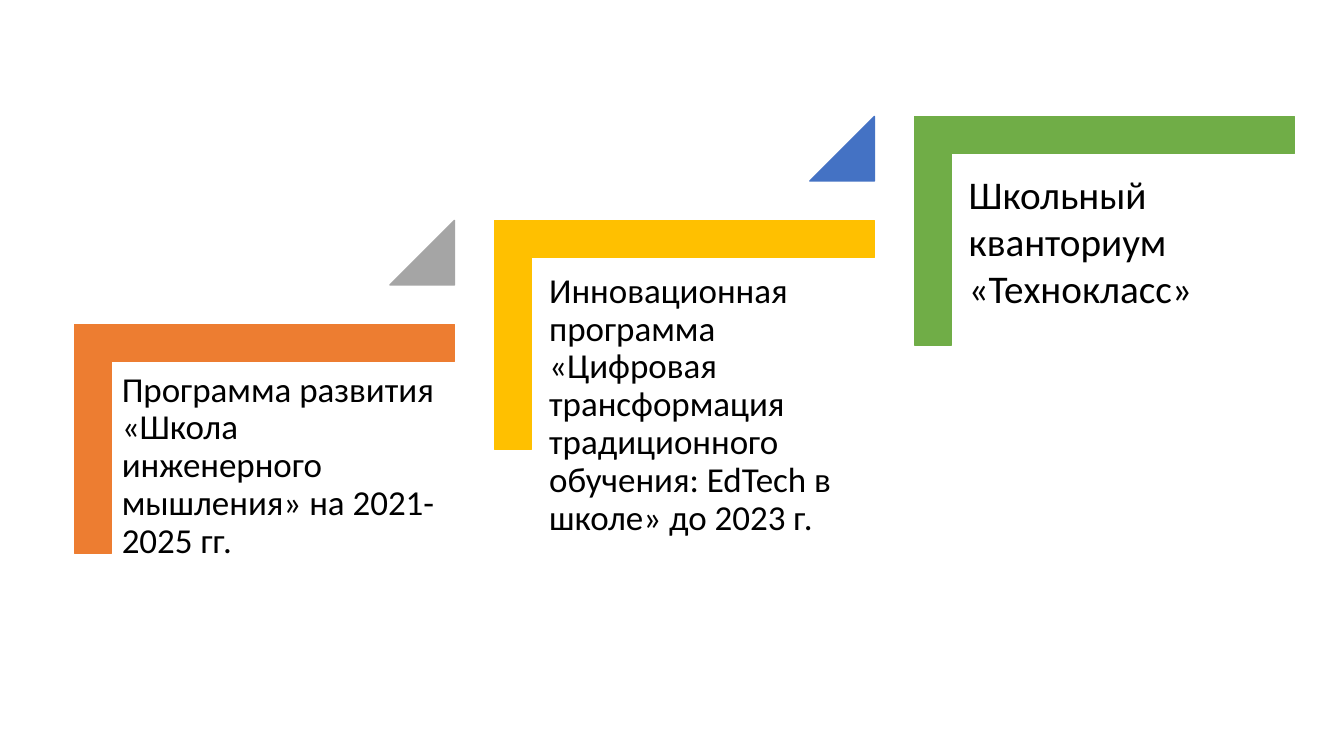
from pptx import Presentation
from pptx.dml.color import RGBColor
from pptx.enum import shapes, text
from pptx.util import Pt

STEP_W, STEP_H = 271.4, 163.4
FIRST_X, FIRST_Y = 53.3, 231.8
RUN, RISE = 299.9, 74.3
ARM, TRIANGLE = 0.161, 46.1

# corner colour, triangle colour, wording, size, line spacing, vertical inset,
# text box relative to the step (left, top, width, height)
STEPS = [
    ("ED7D31", "A5A5A5",
     "Программа развития «Школа инженерного мышления» на 2021-2025 гг.",
     25, 0.9, 7.2, (26.6, 26.6, 244.8, 214.6)),
    ("FFC000", "4472C4",
     "Инновационная программа «Цифровая трансформация традиционного "
     "обучения: EdTech в школе» до 2023 г.",
     25, 0.9, 7.2, (32, 30.4, 244.8, 214.6)),
    ("70AD47", None, "Школьный кванториум «Технокласс»",
     28, 1.0, 3.6, (31.7, 35, 174.2, 108.7)),
]


def rgb(value):
    return RGBColor.from_string(value)


def add_solid(s, kind, x, y, w, h, colour):
    sp = s.shapes.add_shape(kind, Pt(x), Pt(y), Pt(w), Pt(h))
    sp.shadow.inherit = False
    sp.fill.solid()
    sp.fill.fore_color.rgb = rgb(colour)
    sp.line.color.rgb = rgb(colour)
    sp.line.width = Pt(1)
    return sp


def add_corner(s, x, y, w, h, colour):
    """Fill the box with a corner turned so its arms run along the left and top."""
    sp = add_solid(s, shapes.MSO_SHAPE.CORNER, x + (w - h) / 2, y + (h - w) / 2,
                   h, w, colour)
    sp.rotation = 90
    sp.adjustments[0] = sp.adjustments[1] = ARM


def add_label(s, x, y, w, h, wording, size, spacing, inset):
    tf = s.shapes.add_textbox(Pt(x), Pt(y), Pt(w), Pt(h)).text_frame
    tf.word_wrap = True
    tf.vertical_anchor = text.MSO_ANCHOR.TOP
    tf.margin_left = tf.margin_right = Pt(7.2)
    tf.margin_top = tf.margin_bottom = Pt(inset)
    tf.text = wording
    p = tf.paragraphs[0]
    p.line_spacing = spacing
    font = p.runs[0].font
    font.name, font.size, font.color.rgb = "Calibri", Pt(size), rgb("000000")


def add_step(s, x, y, colour, rise_colour, wording, size, spacing, inset, box):
    add_corner(s, x, y, STEP_W, STEP_H, colour)
    left, top, w, h = box
    add_label(s, x + left, y + top, w, h, wording, size, spacing, inset)
    if rise_colour:
        sp = add_solid(s, shapes.MSO_SHAPE.ISOSCELES_TRIANGLE, x + STEP_W - TRIANGLE,
                       y - RISE, TRIANGLE, TRIANGLE, rise_colour)
        sp.adjustments[0] = 1


def main():
    prs = Presentation()
    prs.slide_width, prs.slide_height = Pt(960), Pt(540)
    s = prs.slides.add_slide(prs.slide_layouts[6])
    for i, step in enumerate(STEPS):
        add_step(s, FIRST_X + i * RUN, FIRST_Y - i * RISE, *step)
    prs.save("out.pptx")


if __name__ == "__main__":
    main()
